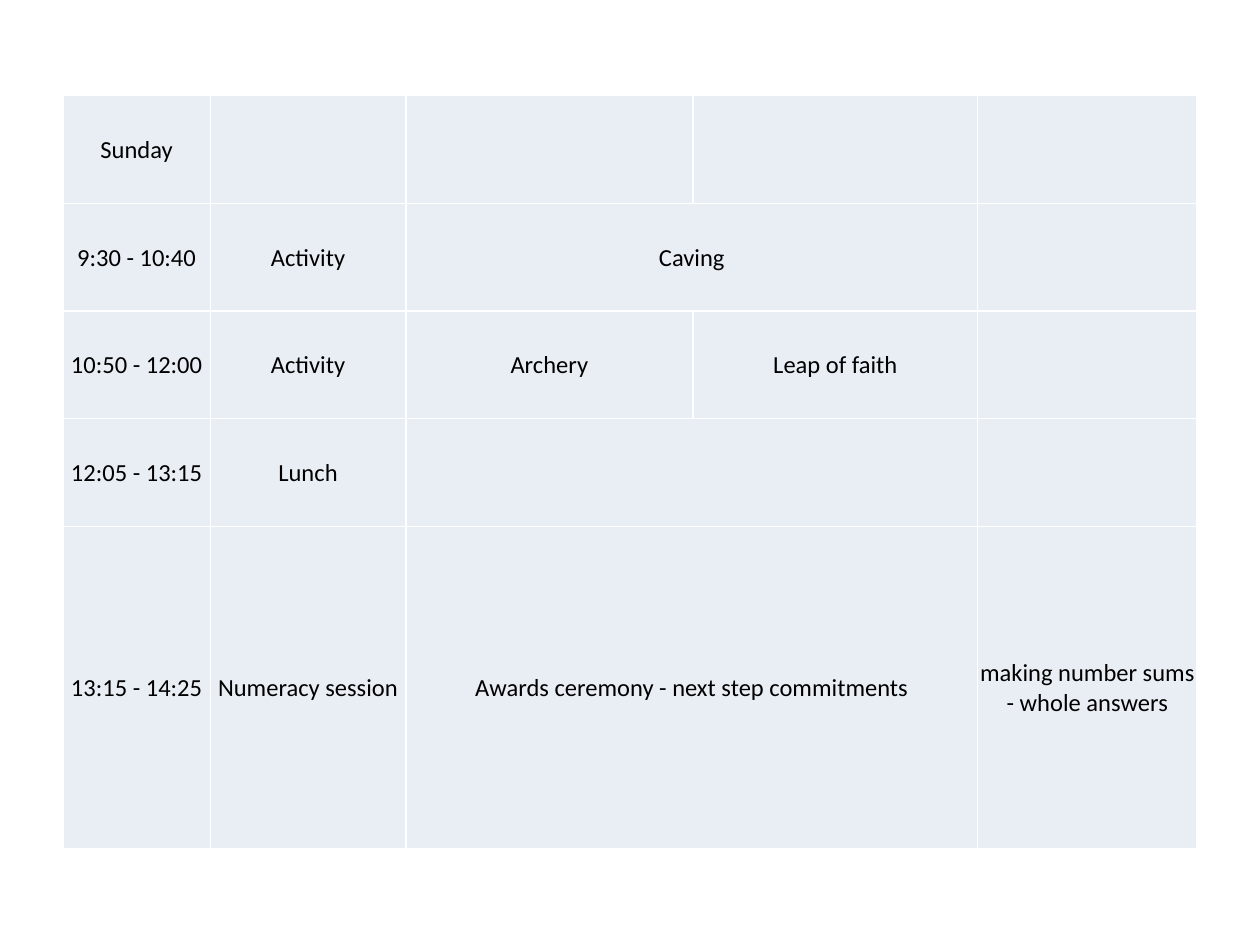
"""Build the Sunday timetable slide."""
from lxml.etree import SubElement
from pptx import Presentation
from pptx.dml.color import RGBColor
from pptx.enum.text import MSO_ANCHOR, PP_ALIGN
from pptx.oxml.ns import qn
from pptx.util import Cm, Pt

HEX = {"cell": "E9EDF4", "rule": "FFFFFF", "text": "000000"}
COLS = [2.97, 3.94, 5.79, 5.74, 4.42]
ROWS = [2.17] * 4 + [6.5]
PLAN = [
    ["Sunday", "", "", "", ""],
    ["9:30 - 10:40", "Activity", "Caving", "", ""],
    ["10:50 - 12:00", "Activity", "Archery", "Leap of faith", ""],
    ["12:05 - 13:15", "Lunch", "", "", ""],
    ["13:15 - 14:25", "Numeracy session", "Awards ceremony - next step commitments",
     "", "making number sums - whole answers"],
]
JOINED = [1, 3, 4]
CELL = {
    "vertical_anchor": MSO_ANCHOR.MIDDLE,
    "margin_left": Cm(0.02),
    "margin_right": Cm(0.02),
    "margin_top": Cm(0.02),
    "margin_bottom": Cm(0),
}
FONT = {"name": "Calibri", "size": Pt(14), "bold": False}
FLAGS = {"first_row": False, "horz_banding": False}


def apply(item, style):
    for name, value in style.items():
        setattr(item, name, value)


def rule(cell):
    props = cell._tc.get_or_add_tcPr()
    for side in ("lnL", "lnR", "lnT", "lnB"):
        line = SubElement(props, qn(f"a:{side}"), w=str(Pt(1)))
        fill = SubElement(line, qn("a:solidFill"))
        SubElement(fill, qn("a:srgbClr"), val=HEX["rule"])


def write(cell, text):
    apply(cell, CELL)
    rule(cell)
    cell.fill.solid()
    cell.fill.fore_color.rgb = RGBColor.from_string(HEX["cell"])
    para = cell.text_frame.paragraphs[0]
    para.alignment = PP_ALIGN.CENTER
    if text:
        run = para.add_run()
        run.text = text
        apply(run.font, FONT)
        run.font.color.rgb = RGBColor.from_string(HEX["text"])


def add_plan(slide):
    frame = slide.shapes.add_table(len(ROWS), len(COLS), Cm(1.27), Cm(1.93),
                                   Cm(sum(COLS)), Cm(sum(ROWS)))
    table = frame.table
    apply(table, FLAGS)
    for col, width in zip(table.columns, COLS):
        col.width = Cm(width)
    for row, height, texts in zip(table.rows, ROWS, PLAN):
        row.height = Cm(height)
        for cell, text in zip(row.cells, texts):
            write(cell, text)
    for row in JOINED:
        table.cell(row, 2).merge(table.cell(row, 3))


def main():
    deck = Presentation()
    apply(deck, {"slide_width": Cm(25.4), "slide_height": Cm(19.05)})
    add_plan(deck.slides.add_slide(deck.slide_layouts[6]))
    deck.save("out.pptx")


if __name__ == "__main__":
    main()
